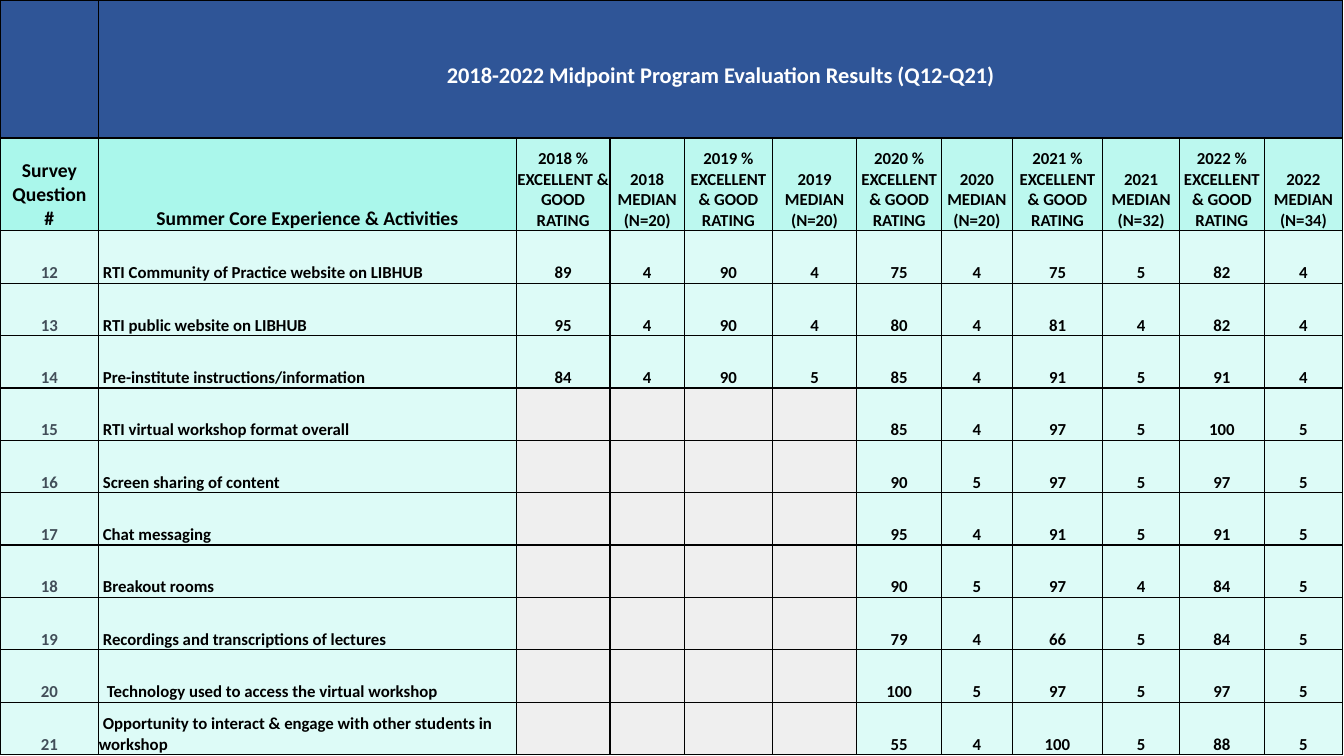
from lxml.etree import SubElement
from pptx import Presentation
from pptx.dml.color import RGBColor
from pptx.enum.text import MSO_ANCHOR, PP_ALIGN
from pptx.oxml import parse_xml
from pptx.oxml.ns import nsdecls, qn
from pptx.util import Inches, Pt

BLUE = RGBColor(0x2F, 0x55, 0x97)
MINT = RGBColor(0xAA, 0xF7, 0xEB)
GRAY = RGBColor(0xD9, 0xD9, 0xD9)
SLATE = RGBColor(0x42, 0x4E, 0x59)
BLACK = RGBColor(0x00, 0x00, 0x00)
WHITE = RGBColor(0xFF, 0xFF, 0xFF)

COLUMN_WIDTHS = [0.98, 4.14, 0.93, 0.74, 0.87, 0.84, 0.84, 0.7, 0.9, 0.76, 0.84, 0.78]
BANNER_HEIGHT, HEADING_HEIGHT, RESULT_HEIGHT = 1.37, 0.92, 0.52
FIRST_QUESTION = 12
FIRST_RESULT_ROW = 2

RESPONDENTS = {2018: 20, 2019: 20, 2020: 20, 2021: 32, 2022: 34}
RESULTS = [
    ("RTI Community of Practice website on LIBHUB", [89, 4, 90, 4, 75, 4, 75, 5, 82, 4]),
    ("RTI public website on LIBHUB", [95, 4, 90, 4, 80, 4, 81, 4, 82, 4]),
    ("Pre-institute instructions/information", [84, 4, 90, 5, 85, 4, 91, 5, 91, 4]),
    ("RTI virtual workshop format overall", [85, 4, 97, 5, 100, 5]),
    ("Screen sharing of content", [90, 5, 97, 5, 97, 5]),
    ("Chat messaging", [95, 4, 91, 5, 91, 5]),
    ("Breakout rooms", [90, 5, 97, 4, 84, 5]),
    ("Recordings and transcriptions of lectures", [79, 4, 66, 5, 84, 5]),
    ("Technology used to access the virtual workshop", [100, 5, 97, 5, 97, 5]),
    ("Opportunity to interact & engage with other students in workshop",
     [55, 4, 100, 5, 88, 5]),
]


def fill_cell(cell, color, opacity=100):
    cell.fill.solid()
    cell.fill.fore_color.rgb = color
    if opacity < 100:
        color_element = cell._tc.tcPr.find(qn("a:solidFill"))[0]
        SubElement(color_element, qn("a:alpha"), val=str(opacity * 1000))


def border_cell(cell):
    for position, side in enumerate(("lnL", "lnR", "lnT", "lnB")):
        border = parse_xml(
            f'<a:{side} {nsdecls("a")} w="{Pt(1)}"><a:solidFill>'
            f'<a:srgbClr val="{BLACK}"/></a:solidFill></a:{side}>')
        cell._tc.tcPr.insert(position, border)


def write_cell(cell, lines, size=12, color=BLACK, align=PP_ALIGN.CENTER, indent=0):
    frame = cell.text_frame
    for number, line in enumerate(lines):
        paragraph = frame.add_paragraph() if number else frame.paragraphs[0]
        paragraph.alignment = align
        if indent:
            paragraph._p.get_or_add_pPr().set("indent", str(Inches(indent)))
        run = paragraph.add_run()
        run.text = line
        run.font.name = "Calibri"
        run.font.size = Pt(size)
        run.font.bold = True
        run.font.color.rgb = color


def add_results_table(slide):
    heights = [BANNER_HEIGHT, HEADING_HEIGHT] + [RESULT_HEIGHT] * len(RESULTS)
    frame = slide.shapes.add_table(
        len(heights), len(COLUMN_WIDTHS), 0, 0,
        Inches(sum(COLUMN_WIDTHS)), Inches(sum(heights)))
    table = frame.table
    table.first_row = False
    table.horz_banding = False
    for column, width in zip(table.columns, COLUMN_WIDTHS):
        column.width = Inches(width)
    for row, height in zip(table.rows, heights):
        row.height = Inches(height)
    for cell in table.iter_cells():
        cell.margin_left = cell.margin_right = 0
        cell.margin_top = cell.margin_bottom = 0
        cell.vertical_anchor = MSO_ANCHOR.BOTTOM
        border_cell(cell)
    return table


def fill_banner(table):
    for column in range(len(COLUMN_WIDTHS)):
        fill_cell(table.cell(0, column), BLUE)
    banner = table.cell(0, 1)
    banner.merge(table.cell(0, len(COLUMN_WIDTHS) - 1))
    banner.margin_bottom = Inches(0.48)
    write_cell(banner, ["2018-2022 Midpoint Program Evaluation Results (Q12-Q21)"], 16, WHITE)


def fill_headings(table):
    question, activity = table.cell(1, 0), table.cell(1, 1)
    write_cell(question, ["Survey", "Question", "#"], 14)
    write_cell(activity, ["Summer Core Experience & Activities"], 14)
    fill_cell(question, MINT)
    fill_cell(activity, MINT)
    for index, (year, count) in enumerate(RESPONDENTS.items()):
        headings = (f"{year} % EXCELLENT & GOOD RATING", f"{year} MEDIAN (N={count})")
        for offset, heading in enumerate(headings):
            cell = table.cell(1, 2 + 2 * index + offset)
            write_cell(cell, [heading])
            fill_cell(cell, MINT, 79)


def fill_result(table, index, activity, scores):
    row = FIRST_RESULT_ROW + index
    first_score = len(COLUMN_WIDTHS) - len(scores)
    for column in range(len(COLUMN_WIDTHS)):
        unasked = 2 <= column < first_score
        fill_cell(table.cell(row, column), GRAY if unasked else MINT, 40)
    write_cell(table.cell(row, 0), [str(FIRST_QUESTION + index)], color=SLATE)
    indent = 0.08 if activity.startswith("Technology") else 0.04
    write_cell(table.cell(row, 1), [activity], align=PP_ALIGN.LEFT, indent=indent)
    for column, score in enumerate(scores, first_score):
        write_cell(table.cell(row, column), [str(score)])


def main():
    presentation = Presentation()
    presentation.slide_width = Inches(13.33)
    presentation.slide_height = Inches(7.5)
    slide = presentation.slides.add_slide(presentation.slide_layouts[6])
    table = add_results_table(slide)
    fill_banner(table)
    fill_headings(table)
    for index, (activity, scores) in enumerate(RESULTS):
        fill_result(table, index, activity, scores)
    presentation.save("out.pptx")


if __name__ == "__main__":
    main()
